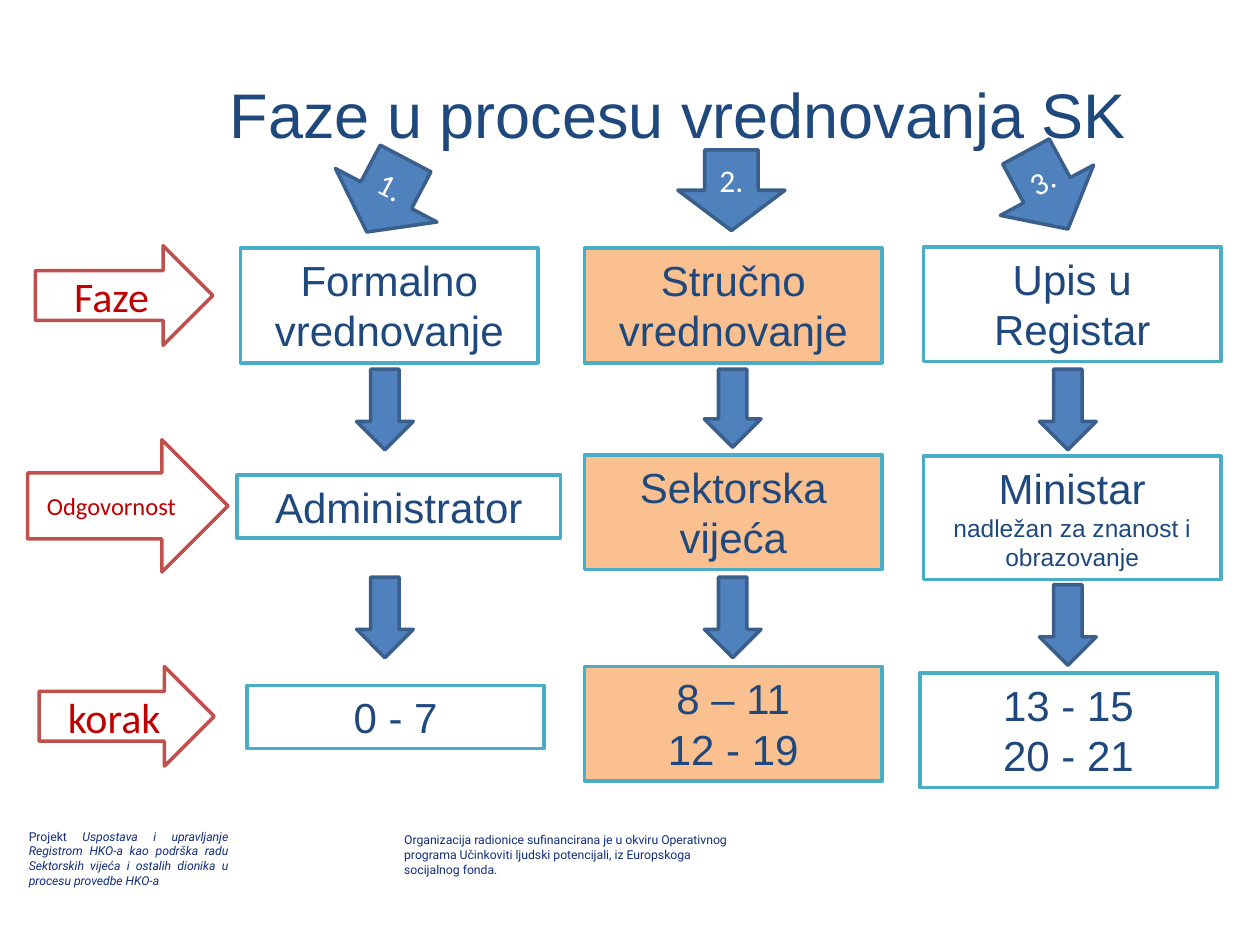
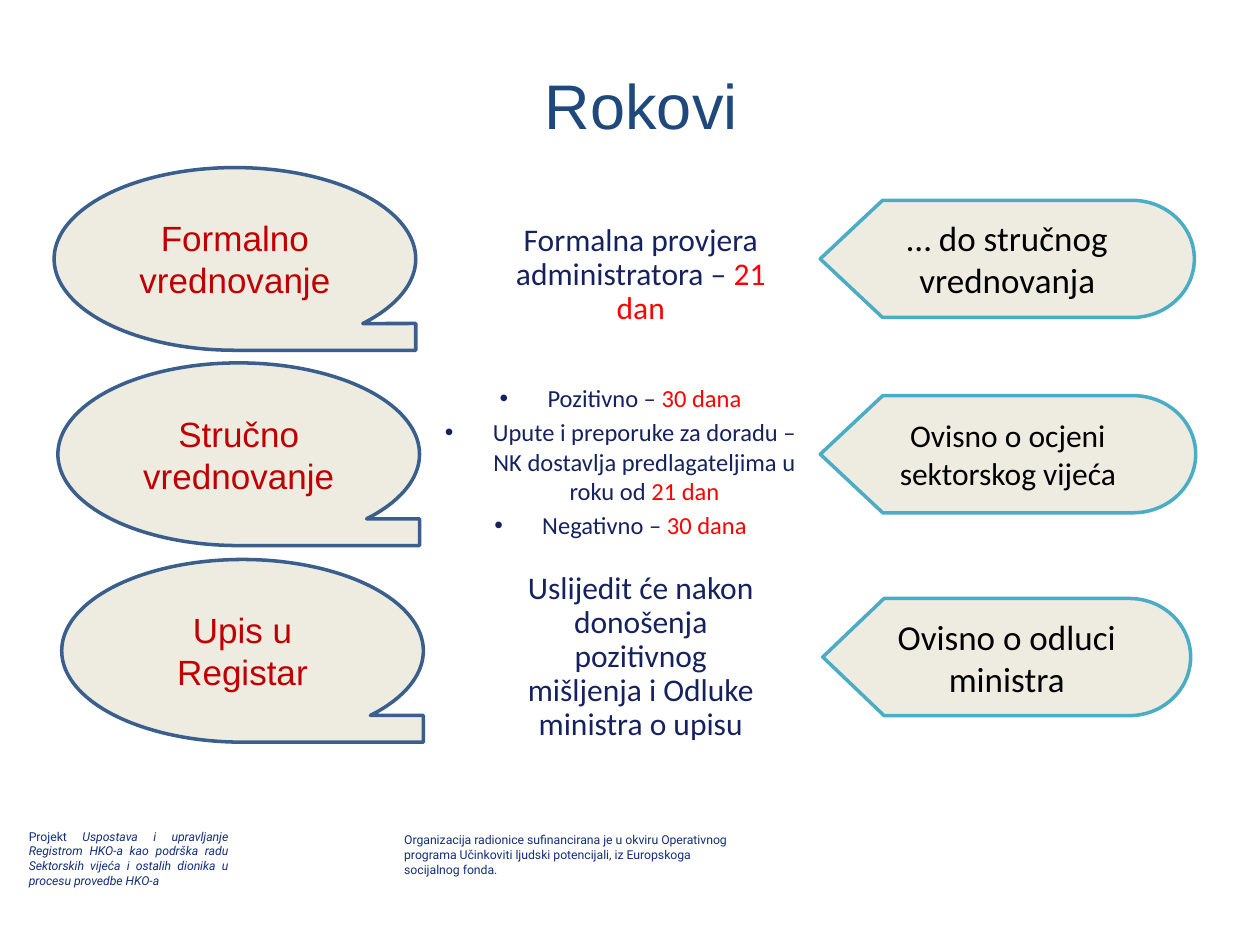
from lxml import etree
from pptx import Presentation
from pptx import util as u
from pptx.dml.color import RGBColor
from pptx.enum import shapes, text
from pptx.oxml.ns import qn

NAVY, BLUE, BLUE_EDGE = "1F497D", "4F81BD", "3A5F8C"
TEAL, PEACH, CREAM = "4BACC6", "FAC090", "EEECE1"
RED, DARK_RED, RED_EDGE = "FF0000", "C00000", "C0504D"
INK, FOOTER_BLUE = "162260", "122E7C"
WHITE, BLACK = "FFFFFF", "000000"

KIND = shapes.MSO_SHAPE
CENTER, JUSTIFY, LEFT = text.PP_ALIGN.CENTER, text.PP_ALIGN.JUSTIFY, text.PP_ALIGN.LEFT
TOP, MIDDLE = text.MSO_ANCHOR.TOP, text.MSO_ANCHOR.MIDDLE

TITLE = {"size": 36, "name": "Arial", "color": NAVY}
STEP = {"size": 24, "name": "Arial", "color": NAVY}
LABEL = {"size": 24, "name": "Calibri", "color": DARK_RED}
NUMBER = {"size": 18, "name": "Calibri", "color": WHITE}
STAGE = {"size": 20, "name": "Arial", "color": DARK_RED}
TERM = {"size": 18, "name": "Calibri", "color": INK}
OUTCOME = {"size": 20, "name": "Calibri", "color": BLACK}
FOOTER = {"size": 7, "name": "Roboto", "color": FOOTER_BLUE}


def rgb(value):
    return RGBColor.from_string(value)


def set_font(font, fmt):
    for key, value in fmt.items():
        if key == "color":
            font.color.rgb = rgb(value)
        else:
            setattr(font, key, u.Pt(value) if key == "size" else value)


def add_bullet(p, indent):
    pPr = p._p.get_or_add_pPr()
    pPr.set("marL", str(u.Inches(indent)))
    pPr.set("indent", str(-u.Inches(indent)))
    etree.SubElement(pPr, qn("a:buFont")).set("typeface", "Arial")
    etree.SubElement(pPr, qn("a:buChar")).set("char", "•")


def write(sp, paras, fmt, align=CENTER, anchor=MIDDLE, gap=0, spacing=None, bullets=False):
    """Each paragraph is a string or a list of (string, format changes)."""
    tf = sp.text_frame
    tf.word_wrap = True
    tf.vertical_anchor = anchor
    for i, runs in enumerate(paras):
        p = tf.add_paragraph() if i else tf.paragraphs[0]
        p.alignment = align
        if spacing:
            p.line_spacing = spacing
        if i and gap:
            p.space_before = u.Pt(gap)
        if bullets:
            add_bullet(p, 0.38)
        for words, changes in [(runs, {})] if isinstance(runs, str) else runs:
            r = p.add_run()
            r.text = words
            set_font(r.font, {**fmt, **changes})


def add_text(s, box, paras, fmt, **layout):
    sp = s.shapes.add_textbox(*map(u.Inches, box))
    write(sp, paras, fmt, **layout)


def add_shape(s, kind, box, fill, line, paras=(), fmt=None, rotation=0, anchor=MIDDLE):
    sp = s.shapes.add_shape(kind, *map(u.Inches, box))
    sp.shadow.inherit = False
    sp.fill.solid()
    sp.fill.fore_color.rgb = rgb(fill)
    sp.line.color.rgb = rgb(line)
    sp.line.width = u.Pt(2)
    sp.rotation = rotation
    if paras:
        write(sp, paras, fmt, anchor=anchor)


def new_slide(prs, title, title_box):
    s = prs.slides.add_slide(prs.slide_layouts[6])
    project = [("Projekt ", {}),
               ("Uspostava i upravljanje Registrom HKO-a kao podrška radu Sektorskih vijeća "
                "i ostalih dionika u procesu provedbe HKO-a", {"italic": True})]
    funding = ("Organizacija radionice sufinancirana je u okviru Operativnog programa "
               "Učinkoviti ljudski potencijali, iz Europskoga socijalnog fonda.")
    add_text(s, (0.13, 6.53, 1.78, 0.57), [project], FOOTER, align=JUSTIFY, anchor=TOP)
    add_text(s, (3.11, 6.56, 2.83, 0.45), [funding], FOOTER, align=LEFT, anchor=TOP)
    add_text(s, title_box, [title], TITLE)
    return s


def phase_column(s, left, top, fill, number, steps, arrows):
    """Numbered arrow above a chain of boxes; all offsets are from (left, top)."""
    label, dx, dy, w, h, rotation = number
    add_shape(s, KIND.DOWN_ARROW, (left + dx, top + dy, w, h), BLUE, BLUE_EDGE,
              [label], NUMBER, rotation)
    for dx, dy, w, h, paras in steps:
        add_shape(s, KIND.RECTANGLE, (left + dx, top + dy, w, h), fill, TEAL,
                  paras, STEP, anchor=TOP)
    for dx, dy, h in arrows:
        add_shape(s, KIND.DOWN_ARROW, (left + dx, top + dy, 0.45, h), BLUE, BLUE_EDGE)


def row_labels(s):
    for label, size, box in [("Faze", 24, (0.28, 1.95, 1.41, 0.79)),
                             ("Odgovornost", 14, (0.22, 3.49, 1.59, 1.05)),
                             ("korak", 24, (0.31, 5.29, 1.39, 0.79))]:
        add_shape(s, KIND.RIGHT_ARROW, box, WHITE, RED_EDGE, [label], {**LABEL, "size": size})


def phases_slide(prs):
    s = new_slide(prs, "Faze u procesu vrednovanja SK", (1.64, 0.43, 7.48, 0.94))
    row_labels(s)
    w, h = 2.36, 0.91
    phase_column(s, 1.91, 1.97, WHITE, ("1.", 0.7, -0.75, 0.91, 0.66, 27.8),
                 [(0, 0, w, h, ["Formalno vrednovanje"]),
                  (-0.03, 1.8, 2.57, 0.5, ["Administrator"]),
                  (0.05, 3.47, w, 0.5, ["0 - 7"])],
                 [(0.92, 0.96, 0.64), (0.92, 2.61, 0.64)])
    phase_column(s, 4.64, 1.97, PEACH, ("2.", 0.74, -0.78, 0.85, 0.64, 0),
                 [(0, 0, w, h, ["Stručno vrednovanje"]),
                  (0, 1.64, w, h, ["Sektorska vijeća"]),
                  (0, 3.32, w, h, ["8 – 11", "12 - 19"])],
                 [(0.95, 0.96, 0.62), (0.95, 2.61, 0.64)])
    minister = ["Ministar", [("nadležan za znanost i obrazovanje", {"size": 14})]]
    phase_column(s, 7.33, 1.96, WHITE, ("3.", 0.56, -0.8, 0.84, 0.7, 331.6),
                 [(0, 0, w, h, ["Upis u Registar"]),
                  (0, 1.66, w, 0.98, minister),
                  (-0.03, 3.38, w, h, ["13 - 15", "20 - 21"])],
                 [(0.92, 0.97, 0.64), (0.92, 2.68, 0.64)])


def deadline_row(s, left, top, stage, outcome, outcome_box, size=20):
    add_shape(s, KIND.FLOWCHART_SEQUENTIAL_ACCESS_STORAGE, (left, top, 2.87, 1.45),
              CREAM, BLUE_EDGE, [stage], STAGE)
    x, dy, w = outcome_box
    add_shape(s, KIND.FLOWCHART_DISPLAY, (x, top + dy, w, 0.93), CREAM, TEAL,
              [outcome], {**OUTCOME, "size": size})


def deadlines_slide(prs):
    s = new_slide(prs, "Rokovi", (3.86, 0.36, 2.46, 0.94))
    deadline_row(s, 0.43, 1.33, "Formalno vrednovanje", "… do stručnog vrednovanja",
                 (6.51, 0.26, 2.97))
    deadline_row(s, 0.46, 2.88, "Stručno vrednovanje", "Ovisno o ocjeni sektorskog vijeća",
                 (6.51, 0.26, 2.98), size=18)
    deadline_row(s, 0.49, 4.44, "Upis u Registar", "Ovisno o odluci ministra",
                 (6.53, 0.31, 2.92))

    red = {"color": RED}
    add_text(s, (3.99, 1.73, 2.19, 0.9),
             [[("Formalna provjera administratora – ", {}), ("21 dan", red)]],
             TERM, anchor=TOP, spacing=0.9)
    opinions = [("Pozitivno – ", "30 dana"),
                ("Upute i preporuke za doradu – NK dostavlja predlagateljima u roku od ", "21 dan"),
                ("Negativno – ", "30 dana")]
    add_text(s, (3.43, 2.99, 2.99, 1.34),
             [[(opinion, {}), (days, red)] for opinion, days in opinions],
             {**TERM, "size": 14}, anchor=TOP, gap=2.8, bullets=True)
    add_text(s, (3.99, 4.49, 2.19, 1.61),
             ["Uslijedit će nakon donošenja pozitivnog mišljenja i Odluke ministra o upisu"],
             TERM, anchor=TOP, spacing=0.9)


def main():
    prs = Presentation()
    prs.slide_width, prs.slide_height = u.Inches(10), u.Inches(7.5)
    phases_slide(prs)
    deadlines_slide(prs)
    prs.save("out.pptx")


if __name__ == "__main__":
    main()
